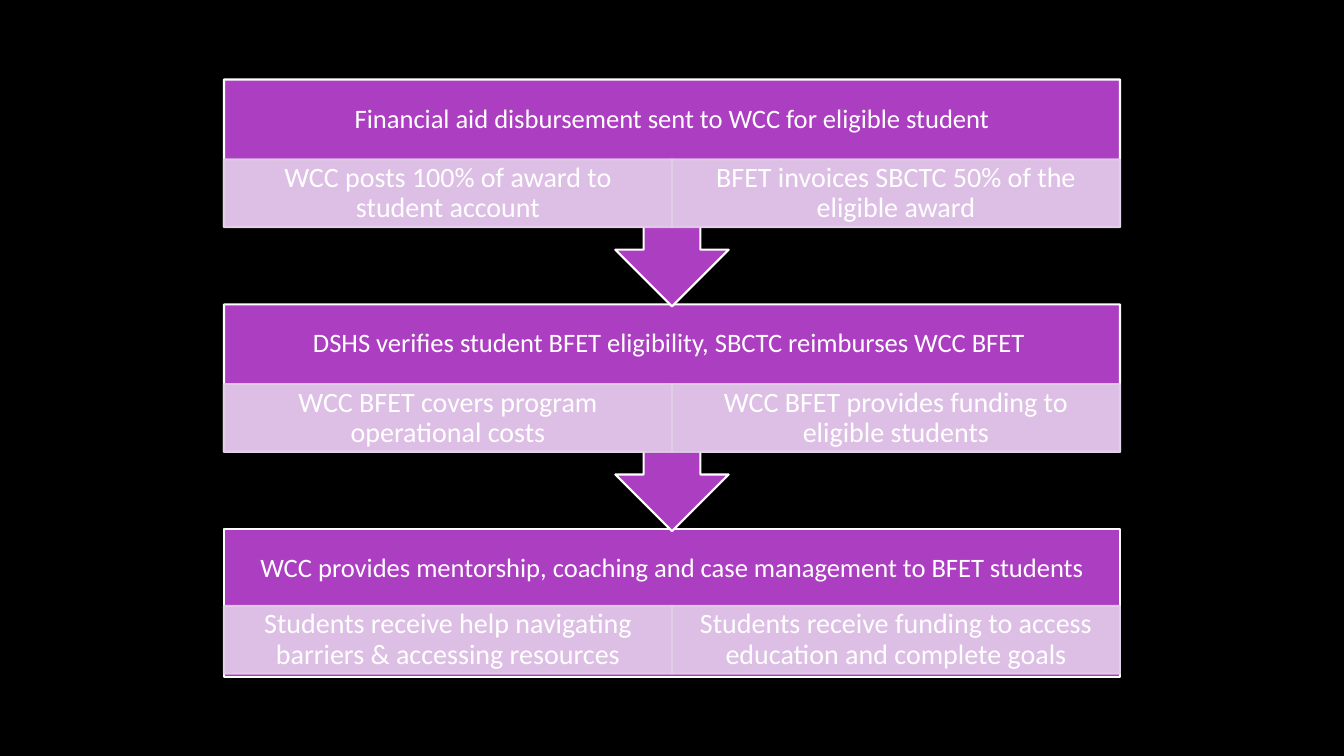
from lxml import etree
from pptx import Presentation
from pptx.dml.color import RGBColor
from pptx.enum.shapes import MSO_SHAPE
from pptx.enum.text import MSO_ANCHOR, PP_ALIGN
from pptx.oxml.ns import qn
from pptx.util import Pt

RECT = MSO_SHAPE.RECTANGLE
CALLOUT = MSO_SHAPE.UP_ARROW_CALLOUT
MIDDLE = MSO_ANCHOR.MIDDLE
CENTER = PP_ALIGN.CENTER

COLORS = {"back": "000000", "main": "AC3EC1", "pale": "E3CEE9", "text": "FFFFFF"}
FONT = "Calibri"
LEFT, WIDTH = 160, 640
TOP, STEP = 56.8, 160.6
HEAD, CELL = 57, 48.4
TALL, LAST = 162, 105.4

STAGES = [
    ("Financial aid disbursement sent to WCC for eligible student",
     ["WCC posts 100% of award to student account",
      "BFET invoices SBCTC 50% of the eligible award"]),
    ("DSHS verifies student BFET eligibility, SBCTC reimburses WCC BFET ",
     ["WCC BFET covers program operational costs",
      "WCC BFET provides funding to eligible students"]),
    ("WCC provides mentorship, coaching and case management to BFET students",
     ["Students receive help navigating barriers & accessing resources",
      "Students receive funding to access education and complete goals"]),
]


def color(name):
    return RGBColor.from_string(COLORS[name])


class Flow:
    def __init__(self, slide):
        self.slide = slide
        fill = slide.background.fill
        fill.solid()
        fill.fore_color.rgb = color("back")

    def shape(self, kind, box, fill, line, alpha=None):
        item = self.slide.shapes.add_shape(kind, *map(Pt, box))
        item.shadow.inherit = False
        item.fill.solid()
        item.fill.fore_color.rgb = color(fill)
        item.line.fill.solid()
        item.line.color.rgb = color(line)
        item.line.width = Pt(1.5)
        if alpha:
            for tint in item._element.spPr.iter(qn("a:srgbClr")):
                etree.SubElement(tint, qn("a:alpha")).set("val", str(alpha * 1000))
        return item

    def label(self, item, text, size, side, edge):
        frame = item.text_frame
        form = {"word_wrap": True, "vertical_anchor": MIDDLE,
                "margin_left": Pt(side), "margin_right": Pt(side),
                "margin_top": Pt(edge), "margin_bottom": Pt(edge)}
        for key, value in form.items():
            setattr(frame, key, value)
        para = frame.paragraphs[0]
        para.alignment = CENTER
        para.line_spacing = 0.9
        run = para.add_run()
        run.text = text
        for key, value in {"name": FONT, "size": Pt(size)}.items():
            setattr(run.font, key, value)
        run.font.color.rgb = color("text")

    def title(self, box, text):
        item = self.slide.shapes.add_textbox(*map(Pt, box))
        self.label(item, text, 19, 10.8, 10.8)

    def cell(self, box, text):
        item = self.shape(RECT, box, "pale", "pale", 90)
        self.label(item, text, 20, 11.4, 2.2)

    def stage(self, top, head, cells, last):
        # Body: the last stage has no arrow
        kind, high = (RECT, LAST) if last else (CALLOUT, TALL)
        body = self.shape(kind, (LEFT, top, WIDTH, high), "main", "text")
        if not last:
            body.rotation = 180
        # Heading and the cells below it
        self.title((LEFT, top, WIDTH, HEAD), head)
        row = top + (54.8 if last else HEAD)
        wide = WIDTH / len(cells)
        for i, text in enumerate(cells):
            self.cell((LEFT + i * wide, row, wide, CELL), text)


def main():
    deck = Presentation()
    deck.slide_width, deck.slide_height = Pt(960), Pt(540)
    flow = Flow(deck.slides.add_slide(deck.slide_layouts[6]))
    # Bottom stage first, so each arrow tip lies over the next stage
    end = len(STAGES) - 1
    for i in range(end, -1, -1):
        flow.stage(TOP + i * STEP, *STAGES[i], last=i == end)
    deck.save("out.pptx")


if __name__ == "__main__":
    main()
